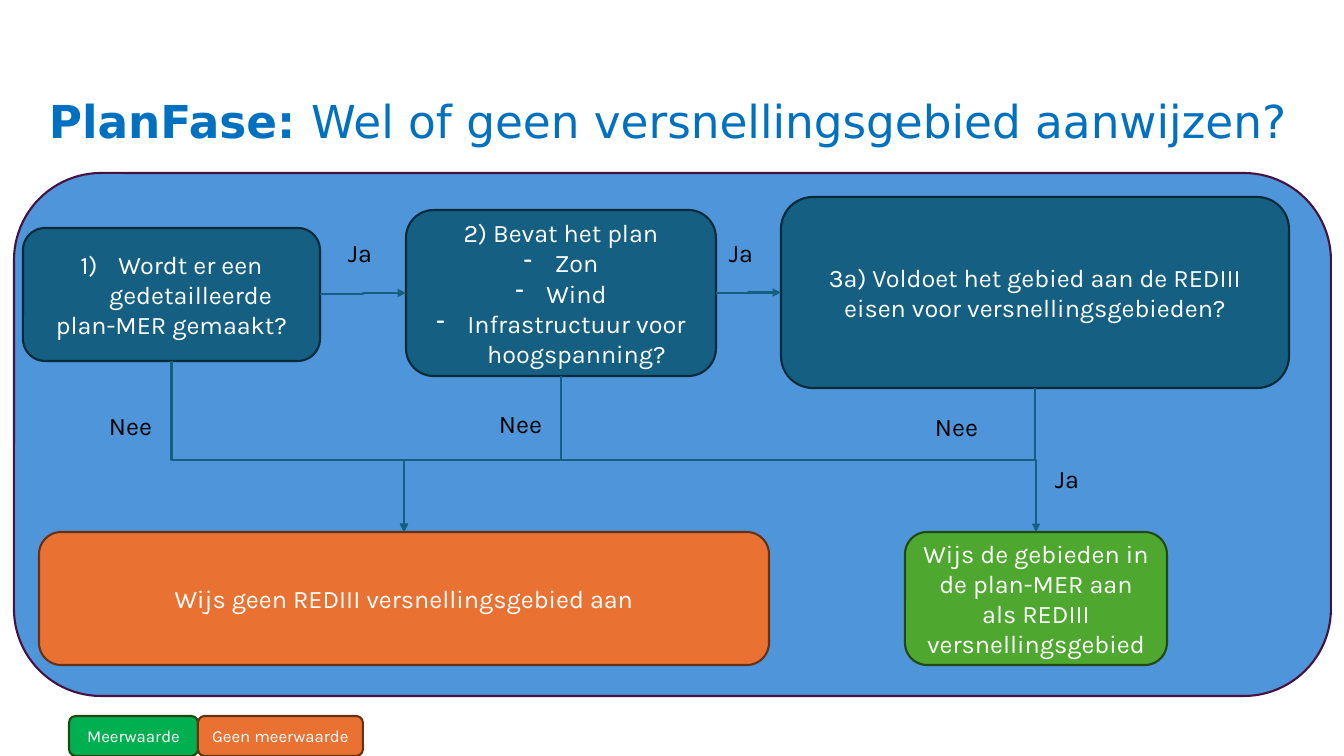
import lxml.etree
import pptx
import pptx.dml.color
import pptx.enum.shapes
import pptx.enum.text
import pptx.oxml.ns
import pptx.util

EMU_PER_PX = 914400 / 100.8
BODY_FONT = "Karla"
TITLE_FONT = "DejaVu Sans"
RGB = pptx.dml.color.RGBColor
WHITE = RGB(0xFF, 0xFF, 0xFF)
BLACK = RGB(0x00, 0x00, 0x00)
TITLE_BLUE = RGB(0x00, 0x70, 0xC0)
PANEL_BLUE = RGB(0x4E, 0x95, 0xD9)
PANEL_EDGE = RGB(0x46, 0x13, 0x40)
TEAL = RGB(0x15, 0x60, 0x82)
TEAL_EDGE = RGB(0x09, 0x2A, 0x39)
ORANGE = RGB(0xE9, 0x71, 0x32)
ORANGE_EDGE = RGB(0x66, 0x32, 0x16)
GREEN = RGB(0x4E, 0xA7, 0x2E)
BRIGHT_GREEN = RGB(0x00, 0xB0, 0x50)
GREEN_EDGE = RGB(0x22, 0x49, 0x14)
TOP, LEFT, BOTTOM, RIGHT = range(4)


def px(length):
    """Convert pixels to EMU."""
    return pptx.util.Emu(round(length * EMU_PER_PX))


def style_run(run, size, color, font=BODY_FONT, bold=False):
    """Set the character format of a run."""
    run.font.name = font
    run.font.size = pptx.util.Pt(size)
    run.font.bold = bold
    run.font.color.rgb = color


def add_list_mark(paragraph, indent, tag, **attributes):
    """Give a paragraph a hanging indent and a bullet or number."""
    properties = paragraph._p.get_or_add_pPr()
    properties.set("marL", str(px(indent)))
    properties.set("indent", str(-px(indent)))
    lxml.etree.SubElement(properties, pptx.oxml.ns.qn(tag), attributes)


def add_box(slide, box, fill, edge, lines=(), size=18):
    """Draw a rounded box with centred paragraphs."""
    shape = slide.shapes.add_shape(
        pptx.enum.shapes.MSO_SHAPE.ROUNDED_RECTANGLE, *map(px, box))
    shape.shadow.inherit = False
    shape.fill.solid()
    shape.fill.fore_color.rgb = fill
    shape.line.color.rgb = edge
    shape.line.width = pptx.util.Pt(1.5)
    text_frame = shape.text_frame
    text_frame.word_wrap = True
    text_frame.vertical_anchor = pptx.enum.text.MSO_ANCHOR.MIDDLE
    text_frame.text = "\n".join(lines)
    for paragraph in text_frame.paragraphs:
        paragraph.alignment = pptx.enum.text.PP_ALIGN.CENTER
        for run in paragraph.runs:
            style_run(run, size, WHITE)
    return shape


def add_label(slide, left, top, text):
    """Write an answer beside an arrow."""
    label = slide.shapes.add_textbox(px(left), px(top), px(110), px(40))
    label.text_frame.word_wrap = True
    label.text_frame.text = text
    style_run(label.text_frame.paragraphs[0].runs[0], 18, BLACK)


def add_arrow(slide, source, source_side, target, target_side, bend_y=None):
    """Join two boxes with an elbow arrow, going down first if bend_y is given."""
    connector = slide.shapes.add_connector(
        pptx.enum.shapes.MSO_CONNECTOR.ELBOW, 0, 0, 0, 0)
    connector.begin_connect(source, source_side)
    connector.end_connect(target, target_side)
    connector.line.color.rgb = TEAL
    connector.line.width = pptx.util.Pt(1.5)
    line = connector.line._get_or_add_ln()
    lxml.etree.SubElement(line, pptx.oxml.ns.qn("a:tailEnd"), type="triangle")
    properties = connector._element.spPr
    lxml.etree.SubElement(properties, pptx.oxml.ns.qn("a:effectLst"))
    if bend_y is None:
        return
    begin_x, begin_y = connector.begin_x, connector.begin_y
    run, drop = connector.end_x - begin_x, connector.end_y - begin_y
    connector.left = begin_x + (run - drop) // 2
    connector.top = begin_y + (drop - abs(run)) // 2
    connector.width, connector.height = drop, abs(run)
    transform = properties.find(pptx.oxml.ns.qn("a:xfrm"))
    transform.set("rot", "16200000" if run > 0 else "5400000")
    transform.set("flipH", "1" if run > 0 else "0")
    transform.set("flipV", "0")
    bend = round((px(bend_y) - begin_y) / drop * 100000)
    adjustments = properties.find(
        pptx.oxml.ns.qn("a:prstGeom")).get_or_add_avLst()
    lxml.etree.SubElement(
        adjustments, pptx.oxml.ns.qn("a:gd"), name="adj1", fmla=f"val {bend}")


def add_title(slide, box):
    """Write the slide title."""
    title = slide.shapes.add_textbox(*map(px, box))
    text_frame = title.text_frame
    text_frame.word_wrap = True
    text_frame.vertical_anchor = pptx.enum.text.MSO_ANCHOR.MIDDLE
    text_frame.margin_bottom = px(44)
    paragraph = text_frame.paragraphs[0]
    paragraph.line_spacing = 0.7
    for text, bold in (("PlanFase: ", True),
                       ("Wel of geen versnellingsgebied aanwijzen?", False)):
        run = paragraph.add_run()
        run.text = text
        style_run(run, 32.4, TITLE_BLUE, TITLE_FONT, bold)


def add_flowchart(slide, box):
    """Draw the panel with questions, outcomes and arrows."""
    left, top, width, height = box
    add_box(slide, box, PANEL_BLUE, PANEL_EDGE)

    def place(x, y, *size):
        return (left + x, top + y, *size)

    detailed_plan = add_box(
        slide, place(9, 55, 297, 133), TEAL, TEAL_EDGE,
        ["Wordt er een gedetailleerde", "plan-MER gemaakt?"])
    add_list_mark(detailed_plan.text_frame.paragraphs[0], 38,
                  "a:buAutoNum", type="arabicParenR")
    plan_content = add_box(
        slide, place(392, 37, 310, 166), TEAL, TEAL_EDGE,
        ["2) Bevat het plan", "Zon", "Wind",
         "Infrastructuur voor hoogspanning?"])
    for paragraph in plan_content.text_frame.paragraphs[1:]:
        add_list_mark(paragraph, 31, "a:buChar", char="-")
    requirements = add_box(
        slide, place(767, 24, 508, 191), TEAL, TEAL_EDGE,
        ["3a) Voldoet het gebied aan de REDIII eisen "
         "voor versnellingsgebieden?"])
    no_area = add_box(
        slide, place(25, 359, 730, 133), ORANGE, ORANGE_EDGE,
        ["Wijs geen REDIII versnellingsgebied aan"])
    area = add_box(
        slide, place(891, 359, 262, 133), GREEN, GREEN_EDGE,
        ["Wijs de gebieden in de plan-MER aan als REDIII "
         "versnellingsgebied"])

    add_arrow(slide, detailed_plan, RIGHT, plan_content, LEFT)
    add_arrow(slide, plan_content, RIGHT, requirements, LEFT)
    for question, outcome in ((detailed_plan, no_area), (plan_content, no_area),
                              (requirements, no_area), (requirements, area)):
        add_arrow(slide, question, BOTTOM, outcome, TOP, top + 287)
    for x, y, answer in ((324, 59, "Ja"), (705, 59, "Ja"), (1031, 285, "Ja"),
                         (85, 232, "Nee"), (475, 230, "Nee"),
                         (911, 233, "Nee")):
        add_label(slide, left + x, top + y, answer)


def add_legend(slide, box):
    """Draw the two legend keys side by side."""
    left, top, width, height = box
    split = 129
    add_box(slide, (left, top, split, height), BRIGHT_GREEN, GREEN_EDGE,
            ["Meerwaarde"], 12)
    add_box(slide, (left + split, top, width - split, height), ORANGE,
            ORANGE_EDGE, ["Geen meerwaarde"], 12)


def main():
    """Build and save the slide."""
    presentation = pptx.Presentation()
    presentation.slide_width = px(1344)
    presentation.slide_height = px(756)
    slide = presentation.slides.add_slide(presentation.slide_layouts[6])
    add_flowchart(slide, (14, 173, 1317, 523))
    add_legend(slide, (69, 716, 294, 40))
    add_title(slide, (39, 99, 1270, 95))
    presentation.save("out.pptx")


if __name__ == "__main__":
    main()
